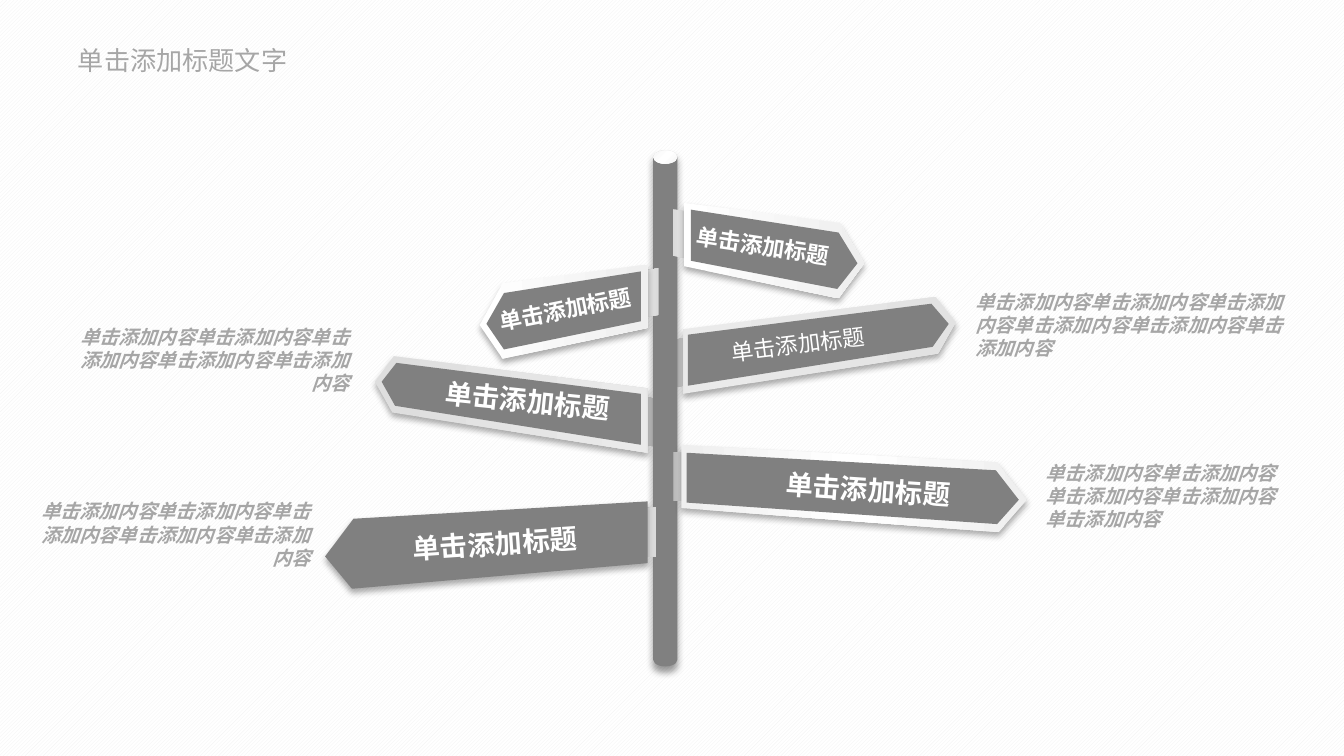
from lxml import etree
from pptx import Presentation
from pptx.dml.color import RGBColor
from pptx.enum.dml import MSO_PATTERN
from pptx.enum.shapes import MSO_SHAPE
from pptx.enum.text import MSO_ANCHOR, MSO_AUTO_SIZE, PP_ALIGN
from pptx.oxml.ns import qn
from pptx.util import Pt

LEFT, CENTER, RIGHT = PP_ALIGN.LEFT, PP_ALIGN.CENTER, PP_ALIGN.RIGHT
TOP = MSO_ANCHOR.TOP
FIT = MSO_AUTO_SIZE.SHAPE_TO_FIT_TEXT
CAN, OVAL, SLANT = MSO_SHAPE.CAN, MSO_SHAPE.OVAL, MSO_SHAPE.PARALLELOGRAM
DIAGONAL = MSO_PATTERN.LIGHT_UPWARD_DIAGONAL

GRAY, PALE, WHITE = "808080", "A6A6A6", "FFFFFF"
SIGN_SHADOW = (32, 3.5, 2.2)  # opacity %, blur, distance
POST_SHADOW = (40, 4, 3)
LABEL, PHRASE = "单击添加标题", "单击添加内容"
BRACKET_LENGTH = 26.6


def color(value):
    return RGBColor.from_string(value)


def set_all(target, values):
    for name, value in values.items():
        setattr(target, name, value)


class SignSlide:
    """Style and drawing methods for the current slide."""

    body_font = "Calibri"
    title_font = "Noto Sans CJK SC"

    def __init__(self, deck):
        self.page = deck.slides.add_slide(deck.slide_layouts[5])
        fill = self.page.background.fill
        fill.patterned()
        fill.pattern = DIAGONAL
        fill.fore_color.rgb = color("F2F2F2")
        fill.back_color.rgb = color(WHITE)

    def paint(self, shape, fill, angle=0, shadow=None):
        """Fill with one colour, or with a list of (position, colour) stops."""
        shape.line.fill.background()
        shape.shadow.inherit = False
        if isinstance(fill, str):
            shape.fill.solid()
            shape.fill.fore_color.rgb = color(fill)
        else:
            shape.fill.gradient()
            shape.fill.gradient_angle = -angle % 360
            stops = shape._element.spPr.find(".//" + qn("a:gsLst"))
            for stop in list(stops):
                stops.remove(stop)
            for position, value in fill:
                stop = etree.SubElement(stops, qn("a:gs"), pos=str(position * 1000))
                etree.SubElement(stop, qn("a:srgbClr"), val=value)
        if shadow:
            opacity, blur, distance = shadow
            effects = shape._element.spPr.find(qn("a:effectLst"))
            outer = etree.SubElement(
                effects, qn("a:outerShdw"), blurRad=str(Pt(blur)),
                dist=str(Pt(distance)), dir="5400000", algn="t", rotWithShape="0")
            tint = etree.SubElement(outer, qn("a:srgbClr"), val="000000")
            etree.SubElement(tint, qn("a:alpha"), val=str(opacity * 1000))

    def shape(self, kind, frame, fill, angle=0, shadow=None, adjust=None, rotation=0):
        shape = self.page.shapes.add_shape(kind, *map(Pt, frame))
        if adjust is not None:
            shape.adjustments[0] = adjust
        shape.rotation = rotation
        self.paint(shape, fill, angle, shadow)
        return shape

    def outline(self, points, fill, shadow=None):
        start, *rest = [(Pt(x), Pt(y)) for x, y in points]
        builder = self.page.shapes.build_freeform(*start)
        builder.add_line_segments(rest, close=True)
        self.paint(builder.convert_to_shape(), fill, shadow=shadow)

    def bracket(self, left, top, depth, rotation, flip, adjust, fill):
        frame = (left, top, BRACKET_LENGTH, depth)
        shape = self.shape(SLANT, frame, fill, 90, adjust=adjust, rotation=rotation)
        if flip:
            shape._element.spPr.find(qn("a:xfrm")).set("flipH", "1")

    def sign(self, bracket, board, face, fill):
        self.bracket(*bracket)
        self.outline(board, fill, SIGN_SHADOW)
        self.outline(face, GRAY)

    def add_words(self, box, text, align, font, size, tint, **style):
        para = box.text_frame.paragraphs[0]
        para.alignment = align
        span = para.add_run()
        span.text = text
        set_all(span.font, {"name": font, "size": Pt(size), **style})
        span.font.color.rgb = color(tint)
        etree.SubElement(span.font._element, qn("a:ea"), typeface=font)

    def text(self, frame, text, align, size, tint, rotation=0, **style):
        box = self.page.shapes.add_textbox(*map(Pt, frame))
        box.rotation = rotation
        set_all(box.text_frame, {"word_wrap": True, "auto_size": FIT})
        self.add_words(box, text, align, self.body_font, size, tint, **style)

    def title(self, frame, text):
        box = self.page.shapes.title
        set_all(box, dict(zip(("left", "top", "width", "height"), map(Pt, frame))))
        set_all(box.text_frame, {
            "margin_left": Pt(5), "margin_right": Pt(5),
            "margin_top": Pt(2.9), "margin_bottom": Pt(2.9),
            "word_wrap": False, "auto_size": FIT, "vertical_anchor": TOP})
        self.add_words(box, text, LEFT, self.title_font, 14, PALE)


# Bracket gradients, then signs: bracket, board outline, face outline, board fill
PLAIN = [(0, "CBCBCB"), (100, "DDDDDD")]
LIGHT = [(0, "DBDBDB"), (100, "EAEAEA")]
EDGED = [(0, "999999"), (7, "DBDBDB"), (100, "EAEAEA")]
DARK = [(0, "9F9F9F"), (7, "B8B8B8"), (100, "EAEAEA")]
GLOSS = [(0, WHITE), (100, "EFEFEF")]

BACK_SIGNS = [
    ((350.6, 192.2, 4.3, 270, True, 0.23, PLAIN),
     [(365.8, 176.4), (365.8, 211), (502.6, 189.4), (511.9, 172.8), (501.1, 159.1)],
     [(368.6, 179.3), (368.6, 206.6), (499.7, 185.8), (508.3, 173.5), (499, 162.7)],
     [(0, "EAEAEA"), (100, "E2E2E2")]),
    ((335.5, 223.9, 4.3, 90, False, 0.19, PLAIN),
     [(347, 208.1), (347, 242.6), (210.2, 221), (200.9, 204.5), (211, 190.8)],
     [(343.4, 211), (343.4, 238.3), (211.7, 217.4), (204.5, 204.5), (212.4, 194.4)],
     [(0, "DEDEDE"), (100, "EAEAEA")]),
]
FRONT_SIGNS = [
    ((335.5, 152.6, 8.6, 90, True, 0.19, EDGED),
     [(347, 141.8), (347, 175.7), (269.3, 192.2), (257, 174.2), (269.3, 151.9)],
     [(343.4, 145.4), (343.4, 172.1), (270, 187.2), (260.6, 173.5), (270, 157)],
     GLOSS),
    ((335.5, 282.2, 5.8, 90, True, 0.05, EDGED),
     [(347, 268.6), (347, 301.7), (188.6, 315.4), (174.2, 298.1), (189.4, 277.9)],
     [(344.9, 272.2), (344.9, 299.5), (189.4, 311), (178.6, 297.4), (190.1, 282.2)],
     GRAY),
    ((350.6, 252, 6.5, 270, False, 0.04, DARK),
     [(365, 238.3), (365, 272.2), (535, 285.1), (550.1, 267.8), (534.2, 247.7)],
     [(367.9, 242.6), (367.9, 269.3), (534.2, 280.8), (545.8, 267.8), (533.5, 252)],
     [(0, "EFEFEF"), (50, WHITE), (100, "EFEFEF")]),
    ((351.4, 121, 8.6, 270, False, 0.19, LIGHT),
     [(366.5, 108.7), (366.5, 142.6), (449.3, 159.8), (463, 141.1), (450, 119.5)],
     [(370.1, 112.3), (370.1, 139.7), (448.6, 154.8), (459.4, 141.1), (449.3, 124.6)],
     GLOSS),
]

# Frame, rotation, size, bold
LABELS = [
    ((365, 121, 87.4, 21.8), 8.5, 12, True),
    ((259.2, 154.8, 87.4, 21.8), 348.7, 12, True),
    ((383.8, 173.5, 87.4, 21.8), 352.8, 12, False),
    ((230.4, 202.3, 104.4, 25.2), 5.9, 14.7, True),
    ((213.1, 278.6, 104.4, 25.2), 356, 14.7, True),
    ((406.8, 249.8, 116.6, 25.2), 3.8, 14.7, True),
]

# Left, top, width, alignment, phrase count
NOTES = [
    (11.5, 264.2, 162, RIGHT, 5),
    (32.4, 170.6, 162, RIGHT, 5),
    (515.5, 151.9, 181, LEFT, 6),
    (553, 243.4, 144, LEFT, 5),
]


def main():
    deck = Presentation()
    deck.slide_width, deck.slide_height = Pt(720), Pt(405)
    slide = SignSlide(deck)
    slide.title((36.7, 20.9, 123.8, 22.3), "单击添加标题文字")

    # Signs behind the post, the post with its cap, signs in front
    for sign in BACK_SIGNS:
        slide.sign(*sign)
    slide.shape(CAN, (349.9, 80.6, 13, 276.5), GRAY, shadow=POST_SHADOW, adjust=0.55)
    cap_fill = [(0, "F6F6F6"), (50, WHITE), (100, "F6F6F6")]
    slide.shape(OVAL, (349.9, 80.6, 13, 7.2), cap_fill, 45)
    for sign in FRONT_SIGNS:
        slide.sign(*sign)

    # Sign labels and side notes
    for frame, rotation, size, bold in LABELS:
        slide.text(frame, LABEL, CENTER, size, WHITE, rotation, bold=bold)
    for left, top, width, align, count in NOTES:
        slide.text((left, top, width, 44.6), PHRASE * count, align, 10.3, PALE,
                   bold=True, italic=True)

    deck.save("out.pptx")


if __name__ == "__main__":
    main()
